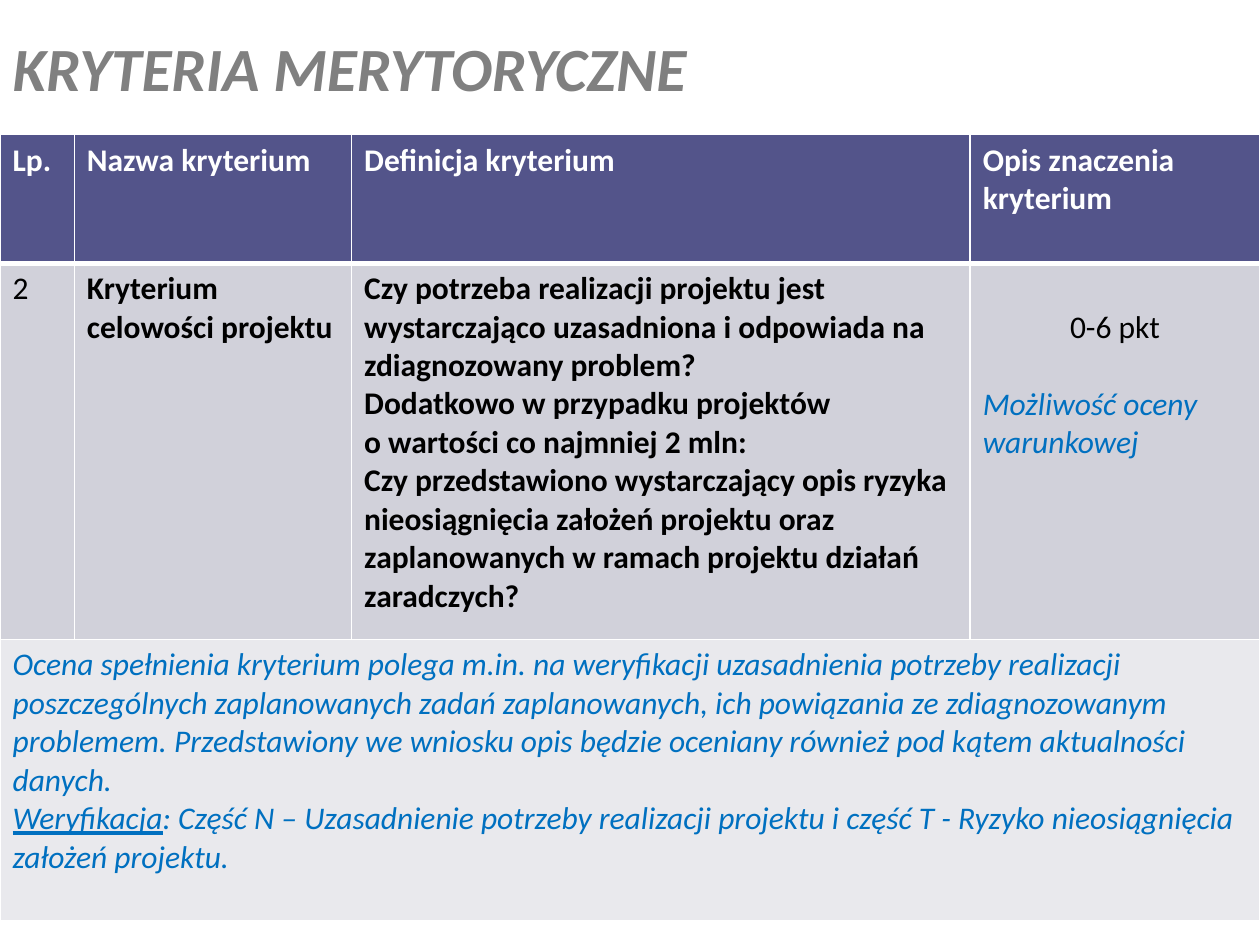
from lxml.etree import SubElement
from pptx import Presentation
from pptx.dml.color import RGBColor
from pptx.enum.text import MSO_ANCHOR as ANCHOR, MSO_AUTO_SIZE as AUTO, PP_ALIGN as ALIGN
from pptx.oxml.ns import qn
from pptx.util import Pt

COLORS = {"white": "FFFFFF", "black": "000000", "title": "808080", "blue": "0070C0",
          "header": "53548A", "body": "D1D1DA", "note": "E9E9ED"}
FONT = "Calibri"
COL_WIDTHS = [42.5, 158.4, 353.5, 165.6]
ROW_HEIGHTS = [73.5, 215, 161]
TITLE_HEIGHT = 77
LINE = 22
HEADERS = ["Lp.", "Nazwa kryterium", "Definicja kryterium", "Opis znaczenia kryterium"]
DEFINITION = [
    "Czy potrzeba realizacji projektu jest wystarczająco uzasadniona i odpowiada na "
    "zdiagnozowany problem?",
    "Dodatkowo w przypadku projektów \vo wartości co najmniej 2 mln:",
    "Czy przedstawiono wystarczający opis ryzyka nieosiągnięcia założeń projektu oraz "
    "zaplanowanych w ramach projektu działań zaradczych?",
]
ASSESSMENT = (
    "Ocena spełnienia kryterium polega m.in. na weryfikacji uzasadnienia potrzeby realizacji "
    "poszczególnych zaplanowanych zadań zaplanowanych, ich powiązania ze zdiagnozowanym "
    "problemem. Przedstawiony we wniosku opis będzie oceniany również pod kątem aktualności "
    "danych."
)
VERIFICATION = (": Część N – Uzasadnienie potrzeby realizacji projektu i część T - "
                "Ryzyko nieosiągnięcia założeń projektu.")


def add_text(p, text, size=18, color="black", bold=False, italic=False, underline=False,
             align=ALIGN.LEFT, before=0):
    """Append text to a paragraph; a vertical tab makes a line break."""
    p.alignment = align
    if before:
        p.space_before = Pt(before)
    for i, part in enumerate(text.split("\v")):
        if i:
            p.add_line_break()
        r = p.add_run()
        r.text = part
        font = r.font
        font.name, font.size = FONT, Pt(size)
        font.bold, font.italic, font.underline = bold, italic, underline
        font.color.rgb = RGBColor.from_string(COLORS[color])


def add_title(s):
    sp = s.shapes.title
    sp.left, sp.top, sp.width, sp.height = Pt(0), Pt(0), Pt(684), Pt(TITLE_HEIGHT)
    tf = sp.text_frame
    tf.auto_size = AUTO.NONE
    tf.vertical_anchor = ANCHOR.MIDDLE
    add_text(tf.paragraphs[0], "KRYTERIA MERYTORYCZNE", size=35.1, color="title",
             bold=True, italic=True)


def style_cell(cell, fill, bottom=1):
    cell.fill.solid()
    cell.fill.fore_color.rgb = RGBColor.from_string(COLORS[fill])
    tc_pr = cell._tc.get_or_add_tcPr()
    for i, (side, width) in enumerate([("L", 1), ("R", 1), ("T", 1), ("B", bottom)]):
        ln = SubElement(tc_pr, qn(f"a:ln{side}"), w=str(Pt(width)))
        solid = SubElement(ln, qn("a:solidFill"))
        SubElement(solid, qn("a:srgbClr"), val=COLORS["white"])
        tc_pr.insert(i, ln)


def add_criteria_table(s):
    table = s.shapes.add_table(len(ROW_HEIGHTS), len(COL_WIDTHS), Pt(0), Pt(TITLE_HEIGHT),
                               Pt(sum(COL_WIDTHS)), Pt(sum(ROW_HEIGHTS))).table
    for col, width in zip(table.columns, COL_WIDTHS):
        col.width = Pt(width)
    for row, height, fill in zip(table.rows, ROW_HEIGHTS, ["header", "body", "note"]):
        row.height = Pt(height)
        for cell in row.cells:
            style_cell(cell, fill, bottom=3 if fill == "header" else 1)
    table.cell(2, 0).merge(table.cell(2, 3))
    return table


def fill_table(table):
    for col, header in enumerate(HEADERS):
        add_text(table.cell(0, col).text_frame.paragraphs[0], header, color="white", bold=True)

    number, name, definition, points = [table.cell(1, col) for col in range(4)]
    add_text(number.text_frame.paragraphs[0], "2")
    add_text(name.text_frame.paragraphs[0], "Kryterium celowości projektu", bold=True)
    tf = definition.text_frame
    for i, text in enumerate(DEFINITION):
        add_text(tf.add_paragraph() if i else tf.paragraphs[0], text, bold=True)
    points.margin_top = Pt(3.6 + LINE)
    tf = points.text_frame
    add_text(tf.paragraphs[0], "0-6 pkt", align=ALIGN.CENTER)
    add_text(tf.add_paragraph(), "Możliwość oceny warunkowej", color="blue", italic=True,
             before=LINE)

    tf = table.cell(2, 0).text_frame
    add_text(tf.paragraphs[0], ASSESSMENT, color="blue", italic=True)
    p = tf.add_paragraph()
    add_text(p, "Weryfikacja", color="blue", italic=True, underline=True)
    add_text(p, VERIFICATION, color="blue", italic=True)


def main():
    prs = Presentation()
    prs.slide_width, prs.slide_height = Pt(720), Pt(540)
    s = prs.slides.add_slide(prs.slide_layouts[5])
    add_title(s)
    fill_table(add_criteria_table(s))
    prs.save("out.pptx")


if __name__ == "__main__":
    main()
